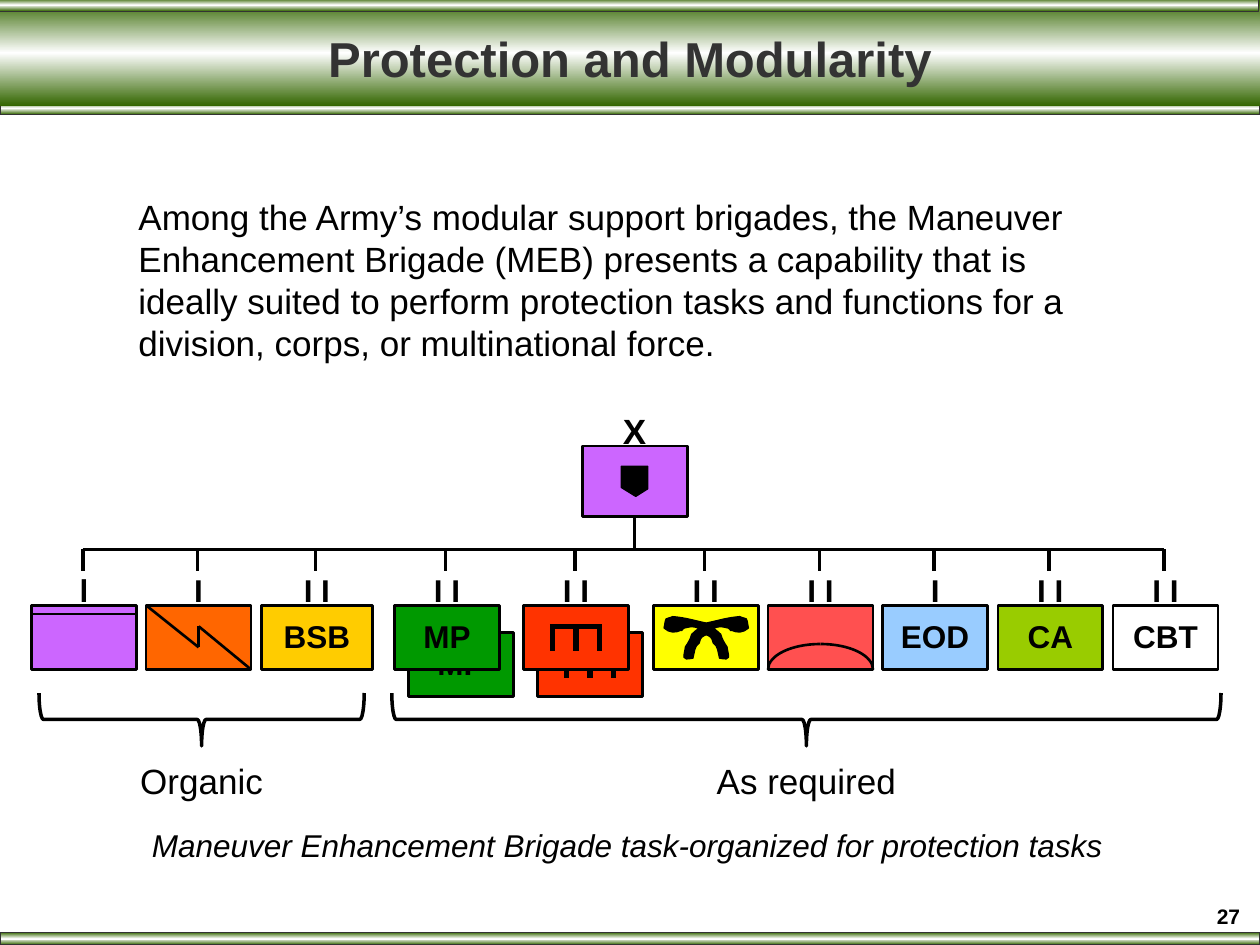
from copy import deepcopy

from pptx import Presentation
from pptx.dml.color import RGBColor
from pptx.enum import shapes, text
from pptx.oxml.ns import qn
from pptx.util import Pt

BLACK = RGBColor(0, 0, 0)
CHARCOAL = RGBColor(0x33, 0x33, 0x33)
FOREST = RGBColor(0x33, 0x66, 0x00)
WHITE = RGBColor(0xFF, 0xFF, 0xFF)
PURPLE = RGBColor(0xCC, 0x66, 0xFF)
ORANGE = RGBColor(0xFF, 0x66, 0x00)
GOLD = RGBColor(0xFF, 0xCC, 0x00)
GREEN = RGBColor(0x00, 0x99, 0x00)
RED = RGBColor(0xFF, 0x33, 0x00)
YELLOW = RGBColor(0xFF, 0xFF, 0x00)
CORAL = RGBColor(0xFF, 0x50, 0x50)
SKY = RGBColor(0x99, 0xCC, 0xFF)
LIME = RGBColor(0x99, 0xCC, 0x00)

TITLE = "Protection and Modularity"
BODY = (
    "Among the Army’s modular support brigades, the Maneuver Enhancement Brigade (MEB) "
    "presents a capability that is ideally suited to perform protection tasks and "
    "functions for a division, corps, or multinational force."
)
CAPTION = "Maneuver Enhancement Brigade task-organized for protection tasks"
PAGE = "27"

BARS = [(0, 58.3, 7.2, True), (0, 532.8, 7.2, True), (0, 0, 60.5, False), (-0.7, -0.7, 7.2, True)]

# centre, width, fill, size mark, symbol, second unit behind
UNITS = [
    (48, 60, PURPLE, "l", "supply", False),
    (113.5, 60, ORANGE, "I", "signal", False),
    (181.1, 63.4, GOLD, "I I", "BSB", False),
    (255.4, 60, GREEN, "I I", "MP", True),
    (329.2, 60, RED, "I I", "engineer", True),
    (403.3, 60, YELLOW, "I I", "chemical", False),
    (468.9, 60, CORAL, "I I", "air defense", False),
    (534.4, 60, SKY, "I", "EOD", False),
    (600.2, 60, LIME, "I I", "CA", False),
    (666, 60, WHITE, "I I", "CBT", False),
]
TEXT_WIDTHS = {"l": 19.4, "I": 19.4, "I I": 29.5,
               "BSB": 54.7, "MP": 41.8, "EOD": 53.3, "CA": 40.3, "CBT": 51.8}
# label, label width, centre, brace length
GROUPS = [("Organic", 85, 115.2, 185.8), ("As required", 118.1, 460.8, 473.8)]

RETORT = [
    (-14.8, 14.4),
    (-17.6, 15.8), (-21.2, 15.8), (-24.1, 13),
    (-22.7, 5.8), (-24.1, 8.6), (-19.1, 6.5),
    (-11.2, 7.2), (-7.6, 8.6), (-0.4, 10.1),
    (2.5, 12.2), (5.4, 13.7), (8.3, 16.6),
    (9, 19.4), (10.4, 21.6), (11.9, 23.8),
    (12.6, 29.5), (14.8, 31.7), (7.6, 30.2),
    (6.8, 27.4), (6.8, 23), (4, 21.6),
    (3.2, 18), (2.5, 18), (-0.4, 16.6),
    (-2.5, 14.4), (-4.7, 12.2), (-8.3, 12.2),
    (-9.7, 12.2), (-11.9, 13), (-12.6, 13),
    (-14.8, 14.4), (-13.3, 15.1), (-14.8, 14.4),
]
DOME_HALF = [(0, -14.6), (16.6, -14.6), (30, -8.1), (30, 0)]
SHIELD = [(-7.7, 0), (-7.7, 12.2), (0.6, 17.3), (7.4, 13), (7.4, 0)]

UNIT_TOP, UNIT_HEIGHT = 345.9, 36.7
BUS_Y, DROP_HEIGHT, DROP_SHIFT = 314, 12.2, -0.7
BACK_SHIFT = (8, 15.5)
BRIGADE_X, BRIGADE_TOP = 362.7, 254.9

presentation = Presentation()
presentation.slide_width, presentation.slide_height = Pt(720), Pt(540)
slide = presentation.slides.add_slide(presentation.slide_layouts[6])


def add_text(content, left, top, width, height, size=18, bold=False, italic=False, color=BLACK,
             align=text.PP_ALIGN.CENTER, anchor=text.MSO_ANCHOR.TOP, wrap=False):
    box = slide.shapes.add_textbox(Pt(left), Pt(top), Pt(width), Pt(height))
    frame = box.text_frame
    frame.word_wrap = wrap
    frame.vertical_anchor = anchor
    paragraph = frame.paragraphs[0]
    paragraph.text = content
    paragraph.alignment = align
    font = paragraph.runs[0].font
    font.name, font.size, font.bold, font.italic = "Arial", Pt(size), bold, italic
    font.color.rgb = color


def style(shape, fill=None, line=BLACK, weight=1.5):
    shape.shadow.inherit = False
    if fill is None:
        shape.fill.background()
    else:
        shape.fill.solid()
        shape.fill.fore_color.rgb = fill
    shape.line.color.rgb = line
    shape.line.width = Pt(weight)


def add_box(left, top, width, height, fill, kind=shapes.MSO_SHAPE.RECTANGLE, **options):
    shape = slide.shapes.add_shape(kind, Pt(left), Pt(top), Pt(width), Pt(height))
    style(shape, fill, **options)
    return shape


def add_line(x1, y1, x2, y2, weight=1.5):
    line = slide.shapes.add_connector(shapes.MSO_CONNECTOR.STRAIGHT, Pt(x1), Pt(y1), Pt(x2), Pt(y2))
    line.line.color.rgb = BLACK
    line.line.width = Pt(weight)
    properties = line._element.spPr
    properties.append(properties.makeelement(qn("a:effectLst"), {}))


def add_outline(points, x, y, fill=None, close=True, weight=0.75, curved=False):
    placed = [(Pt(x + dx), Pt(y + dy)) for dx, dy in points]
    builder = slide.shapes.build_freeform(*placed[0])
    builder.add_line_segments(placed[1:], close=close)
    shape = builder.convert_to_shape()
    style(shape, fill, weight=weight)
    if curved:
        segments = list(shape._element.iter(qn("a:lnTo")))
        for start in range(0, len(points) - 1, 3):
            curve = segments[start].makeelement(qn("a:cubicBezTo"), {})
            segments[start].addprevious(curve)
            for segment in segments[start:start + 3]:
                curve.append(segment[0])
                segment.getparent().remove(segment)


def add_mirrored_curves(points, x, y, **options):
    for side in (1, -1):
        add_outline([(side * dx, dy) for dx, dy in points], x, y, curved=True, **options)


def add_bar(left, top, height, outlined):
    bar = add_box(left, top, 720, height, WHITE, line=CHARCOAL, weight=0.75)
    if not outlined:
        bar.line.fill.background()
    bar.fill.gradient()
    bar.fill.gradient_angle = 90
    first = bar.fill.gradient_stops[0]._gs
    first.addnext(deepcopy(first))
    for stop, position, color in zip(bar.fill.gradient_stops, (0, 0.5, 1), (FOREST, WHITE, FOREST)):
        stop.position = position
        stop.color.rgb = color


def add_symbol(symbol, x, y, behind):
    left, right = x - 30, x + 30
    if symbol == "supply":
        add_line(left, y + 5, right, y + 5)
    elif symbol == "signal":
        add_line(left, y, x, y + 24)
        add_line(x, y + 12, x, y + 24)
        add_line(x, y + 12, right, y + UNIT_HEIGHT)
    elif symbol == "engineer":
        if not behind:
            add_line(x - 15, y + 12, x + 15, y + 12, weight=3)
        for dx in (-13.4, 0, 13.4):
            add_line(x + dx, y + 11.5, x + dx, y + 25.9, weight=3)
    elif symbol == "chemical":
        add_mirrored_curves(RETORT, x + 0.3, y, fill=BLACK)
    elif symbol == "air defense":
        add_mirrored_curves(DOME_HALF, x, y + UNIT_HEIGHT, close=False, weight=1.5)
    else:
        add_centered(symbol, x, y + 3.3)


def add_centered(content, x, top):
    width = TEXT_WIDTHS[content]
    add_text(content, x - width / 2, top, width, 28.8, bold=True)


def add_unit(x, y, width, fill, mark, symbol, behind=False):
    add_box(x - width / 2, y, width, UNIT_HEIGHT, fill)
    add_symbol(symbol, x, y, behind)
    add_centered(mark, x, y - 23.3)


for bar in BARS:
    add_bar(*bar)
add_text(PAGE, 684, 512.6, 36, 23.8, size=12, bold=True)
add_text(TITLE, 36, 5.8, 648, 54, size=28, bold=True, color=CHARCOAL, anchor=text.MSO_ANCHOR.MIDDLE)
add_text(CAPTION, 77, 468.7, 563, 28.8, italic=True)
add_text(BODY, 72, 108, 570.2, 104.4, size=20, align=text.PP_ALIGN.LEFT, wrap=True)

for x, width, fill, mark, symbol, doubled in UNITS:
    if doubled:
        add_unit(x + BACK_SHIFT[0], UNIT_TOP + BACK_SHIFT[1], width, fill, mark, symbol, behind=True)
    add_unit(x, UNIT_TOP, width, fill, mark, symbol)

for label, width, x, length in GROUPS:
    brace = add_box(x - 15.1, 411.1 - length / 2, 30.2, length, None,
                    kind=shapes.MSO_SHAPE.LEFT_BRACE, weight=2)
    brace.rotation = 270
    add_text(label, x - width / 2, 430.6, width, 31.7, size=20)

drops = [unit[0] + DROP_SHIFT for unit in UNITS]
add_line(drops[0], BUS_Y, drops[-1], BUS_Y, weight=2)
add_line(BRIGADE_X, BRIGADE_TOP + 35, BRIGADE_X, BUS_Y, weight=2)
for x in drops:
    add_line(x, BUS_Y, x, BUS_Y + DROP_HEIGHT, weight=2)
add_box(BRIGADE_X - 30, BRIGADE_TOP, 60, 40.3, PURPLE)
add_text("X", BRIGADE_X - 14, 230.4, 28, 31, size=20, bold=True)
add_outline(SHIELD, BRIGADE_X, 266.4, BLACK)

presentation.save("out.pptx")
